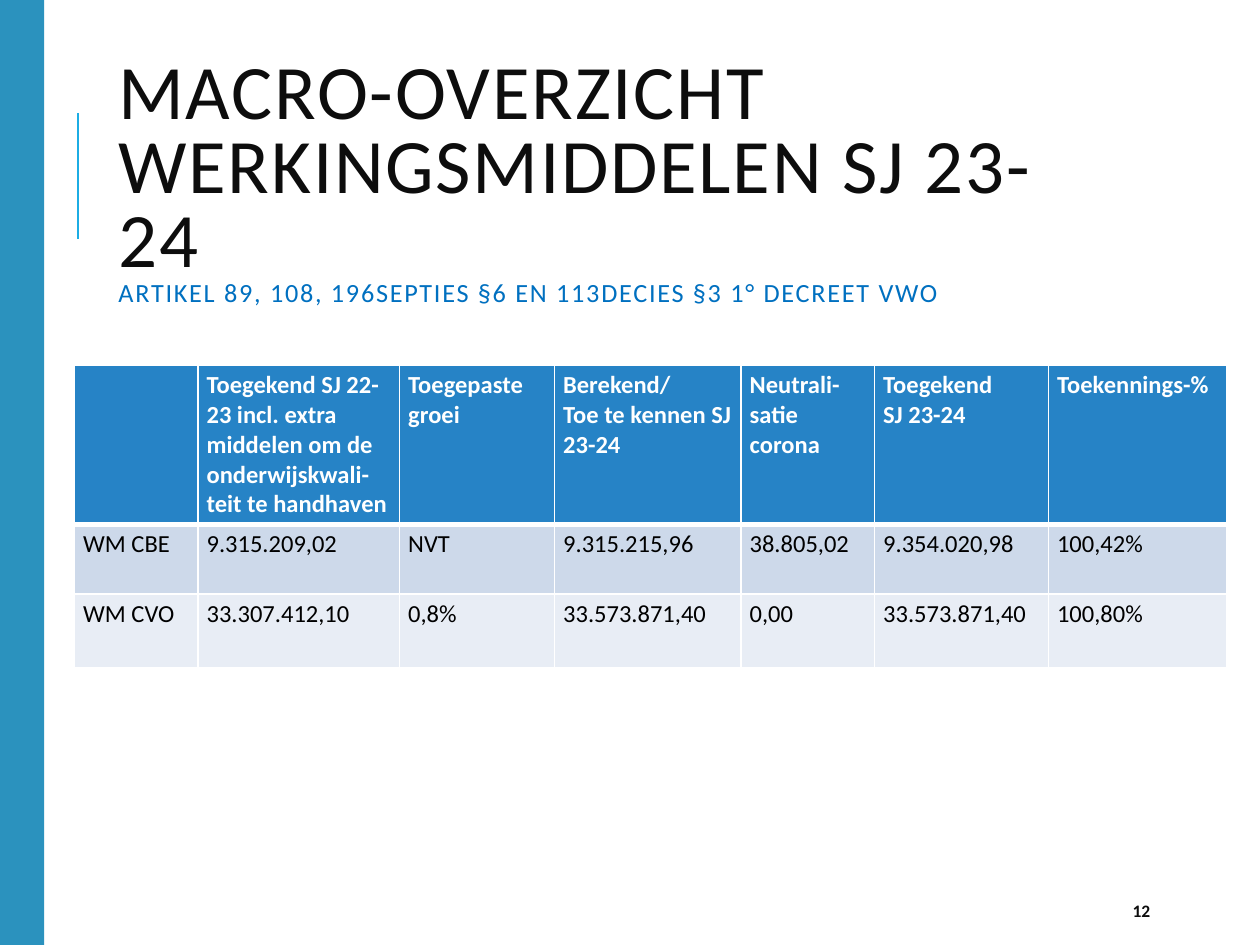
from dataclasses import dataclass

from lxml import etree
from pptx import Presentation
from pptx.dml.color import RGBColor
from pptx.enum.shapes import MSO_CONNECTOR, MSO_SHAPE
from pptx.enum.text import MSO_ANCHOR, MSO_AUTO_SIZE, PP_ALIGN
from pptx.oxml.ns import qn
from pptx.util import Emu, Inches, Pt

RECT = MSO_SHAPE.RECTANGLE
LINE = MSO_CONNECTOR.STRAIGHT
MIDDLE, TOP = MSO_ANCHOR.MIDDLE, MSO_ANCHOR.TOP
LEFT = PP_ALIGN.LEFT
NO_FIT = MSO_AUTO_SIZE.NONE

FONT = "Calibri"
WIDE, HIGH = 10, 7.5
HEX = {
    "band": "2B92BE", "rule": "1CADE4", "ink": "0D0D0D", "sub": "0070C0",
    "head": "2683C6", "odd": "CDD9EA", "even": "E8EDF5",
    "white": "FFFFFF", "black": "000000",
}


@dataclass
class Style:
    size: float
    color: str
    bold: bool = False
    space: float = 0


@dataclass
class Row:
    height: float
    fill: str
    style: Style
    top: float
    base: float
    cells: list[str]


HEAD = Style(14, "white", True)
BODY = Style(14, "black")
COLS = [0.98, 1.6, 1.23, 1.48, 1.06, 1.38, 1.42]
ROWS = [
    Row(1.11, "head", HEAD, 1, 3, [
        "",
        "Toegekend SJ 22-23 incl. extra middelen om de onderwijskwali- teit te handhaven",
        "Toegepaste groei",
        "Berekend/\nToe te kennen SJ 23-24",
        "Neutrali-satie corona",
        "Toegekend\nSJ 23-24",
        "Toekennings-%",
    ]),
    Row(0.55, "odd", BODY, 3, 1, [
        "WM CBE", "9.315.209,02", "NVT", "9.315.215,96",
        "38.805,02", "9.354.020,98", "100,42%",
    ]),
    Row(0.59, "even", BODY, 1, 1, [
        "WM CVO", "33.307.412,10", "0,8%", "33.573.871,40",
        "0,00", "33.573.871,40", "100,80%",
    ]),
]


def tint(name: str) -> RGBColor:
    return RGBColor.from_string(HEX[name])


def place(shape, left: float, top: float, wide: float, high: float) -> None:
    shape.left, shape.top = Inches(left), Inches(top)
    shape.width, shape.height = Inches(wide), Inches(high)


def add_run(para, text: str, style: Style) -> None:
    run = para.add_run()
    run.text = text
    font = run.font
    font.name, font.size, font.bold = FONT, Pt(style.size), style.bold
    font.color.rgb = tint(style.color)
    if style.space:
        run._r.get_or_add_rPr().set("spc", str(int(style.space * 100)))


def draw_side(slide) -> None:
    band = slide.shapes.add_shape(RECT, 0, 0, Inches(0.35), Inches(HIGH))
    band.shadow.inherit = False
    band.fill.solid()
    band.fill.fore_color.rgb = tint("band")
    band.line.fill.background()
    x = Inches(0.62)
    rule = slide.shapes.add_connector(LINE, x, Inches(0.9), x, Inches(1.9))
    rule.line.color.rgb = tint("rule")
    rule.line.width = Pt(1.5)
    etree.SubElement(rule._element.spPr, qn("a:effectLst"))


def draw_title(slide) -> None:
    title = slide.shapes.title
    place(title, 0.84, 0.64, 7.97, 1.64)
    frame = title.text_frame
    frame.word_wrap, frame.auto_size = True, NO_FIT
    frame.vertical_anchor = MIDDLE
    para = frame.paragraphs[0]
    para.alignment, para.line_spacing = LEFT, 0.8
    para.space_before = Pt(0)
    add_run(para, "MACRO-OVERZICHT WERKINGSMIDDELEN SJ 23-24", Style(44, "ink", space=1))
    para.add_line_break()
    add_run(para, "ARTIKEL 89, 108, 196SEPTIES §6 EN 113DECIES §3 1° DECREET VWO",
            Style(15, "sub", space=1))


def edge_cell(cell, top: float, base: float) -> None:
    """Give a cell white borders, placed ahead of its fill as the schema asks."""
    props = cell._tc.get_or_add_tcPr()
    sides = {"lnL": 1, "lnR": 1, "lnT": top, "lnB": base}
    for spot, (tag, width) in enumerate(sides.items()):
        edge = etree.Element(qn(f"a:{tag}"), w=str(int(Pt(width))))
        fill = etree.SubElement(edge, qn("a:solidFill"))
        etree.SubElement(fill, qn("a:srgbClr"), val=HEX["white"])
        props.insert(spot, edge)


def fill_cell(cell, text: str, row: Row) -> None:
    cell.margin_left = cell.margin_right = Inches(0.07)
    cell.margin_top = cell.margin_bottom = Inches(0.04)
    cell.vertical_anchor = TOP
    cell.fill.solid()
    cell.fill.fore_color.rgb = tint(row.fill)
    edge_cell(cell, row.top, row.base)
    frame = cell.text_frame
    for num, part in enumerate(text.split("\n") if text else []):
        para = frame.add_paragraph() if num else frame.paragraphs[0]
        add_run(para, part, row.style)


def draw_table(slide) -> None:
    high = sum(row.height for row in ROWS)
    table = slide.shapes.add_table(
        len(ROWS), len(COLS), Inches(0.59), Inches(2.9),
        Inches(sum(COLS)), Inches(high)).table
    for col, wide in zip(table.columns, COLS):
        col.width = Inches(wide)
    for y, row in enumerate(ROWS):
        table.rows[y].height = Inches(row.height)
        for x, text in enumerate(row.cells):
            fill_cell(table.cell(y, x), text, row)


def draw_page(slide) -> None:
    box = slide.shapes.add_textbox(Emu(0), Emu(0), Emu(0), Emu(0))
    place(box, 8.89, 7.08, 0.8, 0.3)
    frame = box.text_frame
    frame.word_wrap, frame.vertical_anchor = True, MIDDLE
    add_run(frame.paragraphs[0], "12", Style(10, "ink", True))


def main() -> None:
    deck = Presentation()
    deck.slide_width, deck.slide_height = Inches(WIDE), Inches(HIGH)
    slide = deck.slides.add_slide(deck.slide_layouts.get_by_name("Title Only"))
    for draw in (draw_side, draw_title, draw_table, draw_page):
        draw(slide)
    deck.save("out.pptx")


if __name__ == "__main__":
    main()
